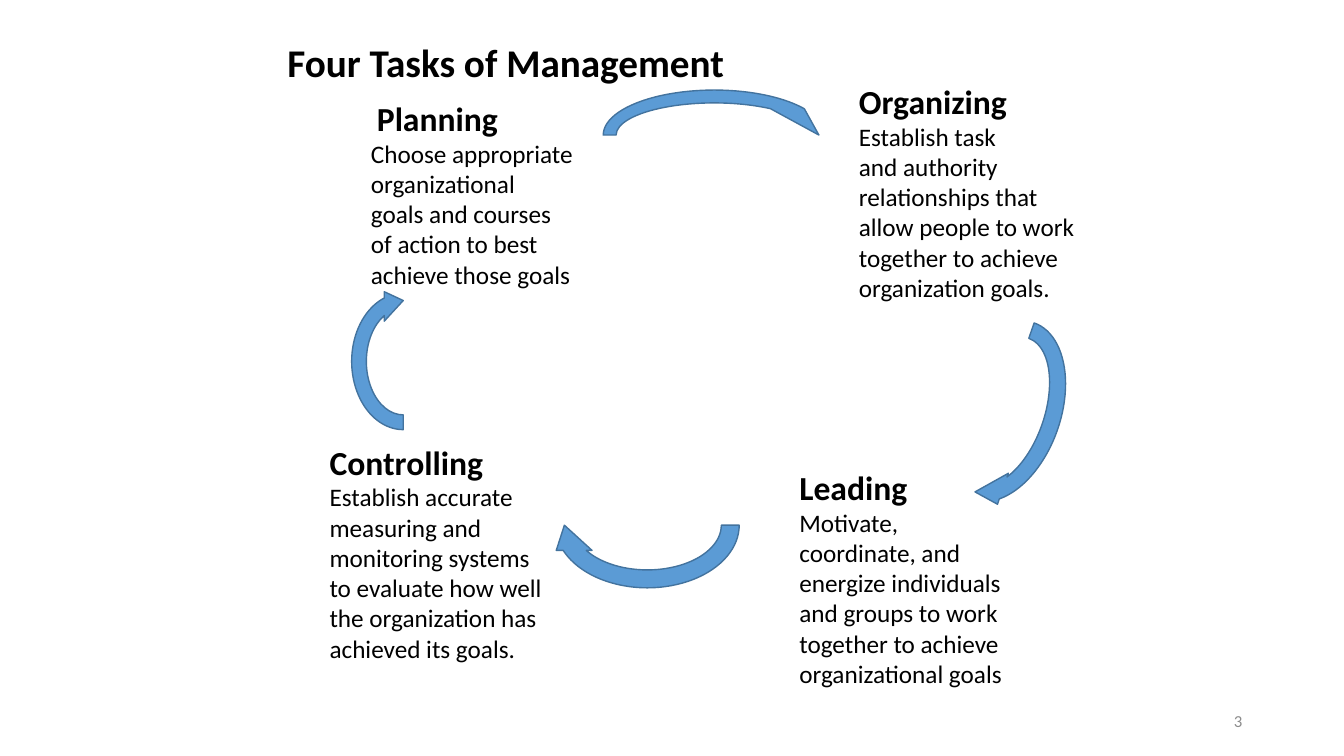
import pptx
import pptx.util
import pptx.dml.color
import pptx.enum.shapes
import pptx.enum.text

Inches = pptx.util.Inches
Pt = pptx.util.Pt
RGBColor = pptx.dml.color.RGBColor
PP_ALIGN = pptx.enum.text.PP_ALIGN
MSO_ANCHOR = pptx.enum.text.MSO_ANCHOR

FONT = "Calibri"
BLACK = RGBColor(0x00, 0x00, 0x00)
GRAY = RGBColor(0x8C, 0x8C, 0x8C)
BLUE = RGBColor(0x5B, 0x9B, 0xD5)
DARK_BLUE = RGBColor(0x43, 0x73, 0x9E)

# Each task: left, top, width, height, heading indent, heading, lines
TASKS = [
    (8.42, 0.75, 2.77, 2.32, 0, "Organizing",
     ["Establish task", "and authority", "relationships that",
      "allow people to work", "together to achieve", "organization goals."]),
    (3.58, 0.92, 3.08, 2.02, 0.06, "Planning",
     ["Choose appropriate", "organizational", "goals and courses",
      "of action to best", "achieve those goals"]),
    (7.83, 4.58, 2.42, 2.32, 0, "Leading",
     ["Motivate,", "coordinate, and", "energize individuals",
      "and groups to work", "together to achieve", "organizational goals"]),
    (3.17, 4.33, 2.58, 2.32, 0, "Controlling",
     ["Establish accurate", "measuring and", "monitoring systems",
      "to evaluate how well", "the organization has", "achieved its goals."]),
]

# Each arrow: left, top, width, height, rotation
ARROWS = [
    (5.92, 0.83, 2.33, 1.02, 0),
    (8.94, 3.43, 2.02, 1.3, 109.3),
    (5.42, 4.5, 2, 1.42, 180),
    (3.25, 3, 1.5, 1.17, 270),
]


def add_run(p, text, size, color=BLACK, bold=False):
    r = p.add_run()
    r.text = text
    r.font.name = FONT
    r.font.size = Pt(size)
    r.font.bold = bold
    r.font.color.rgb = color


def add_box(s, left, top, width, height):
    sp = s.shapes.add_textbox(Inches(left), Inches(top), Inches(width), Inches(height))
    sp.text_frame.word_wrap = True
    return sp.text_frame


def set_title(s, text):
    sp = s.shapes.title
    sp.left, sp.top = Inches(2.75), Inches(0.33)
    sp.width, sp.height = Inches(5.08), Inches(0.57)
    tf = sp.text_frame
    tf.word_wrap = True
    tf.vertical_anchor = MSO_ANCHOR.TOP
    p = tf.paragraphs[0]
    p.alignment = PP_ALIGN.LEFT
    add_run(p, text, 28, bold=True)


def add_task(s, left, top, width, height, indent, heading, lines):
    tf = add_box(s, left, top, width, height)
    p = tf.paragraphs[0]
    if indent:
        p._p.get_or_add_pPr().set("indent", str(Inches(indent)))
    add_run(p, heading, 24, bold=True)
    for line in lines:
        add_run(tf.add_paragraph(), line, 18)


def add_arrow(s, left, top, width, height, rotation):
    sp = s.shapes.add_shape(pptx.enum.shapes.MSO_SHAPE.CIRCULAR_ARROW,
                            Inches(left), Inches(top), Inches(width), Inches(height))
    sp.rotation = rotation
    sp.shadow.inherit = False
    sp.fill.solid()
    sp.fill.fore_color.rgb = BLUE
    sp.line.color.rgb = DARK_BLUE
    sp.line.width = Pt(1)


def add_page_number(s, number):
    tf = add_box(s, 9.42, 6.95, 3, 0.4)
    tf.vertical_anchor = MSO_ANCHOR.MIDDLE
    p = tf.paragraphs[0]
    p.alignment = PP_ALIGN.RIGHT
    add_run(p, number, 12, GRAY)


def main():
    prs = pptx.Presentation()
    prs.slide_width, prs.slide_height = Inches(13.33), Inches(7.5)
    s = prs.slides.add_slide(prs.slide_layouts[5])  # Title Only

    # Title and the four tasks
    set_title(s, "Four Tasks of Management")
    for task in TASKS:
        add_task(s, *task)

    # Cycle arrows between the tasks
    for arrow in ARROWS:
        add_arrow(s, *arrow)

    add_page_number(s, "3")
    prs.save("out.pptx")


if __name__ == "__main__":
    main()
